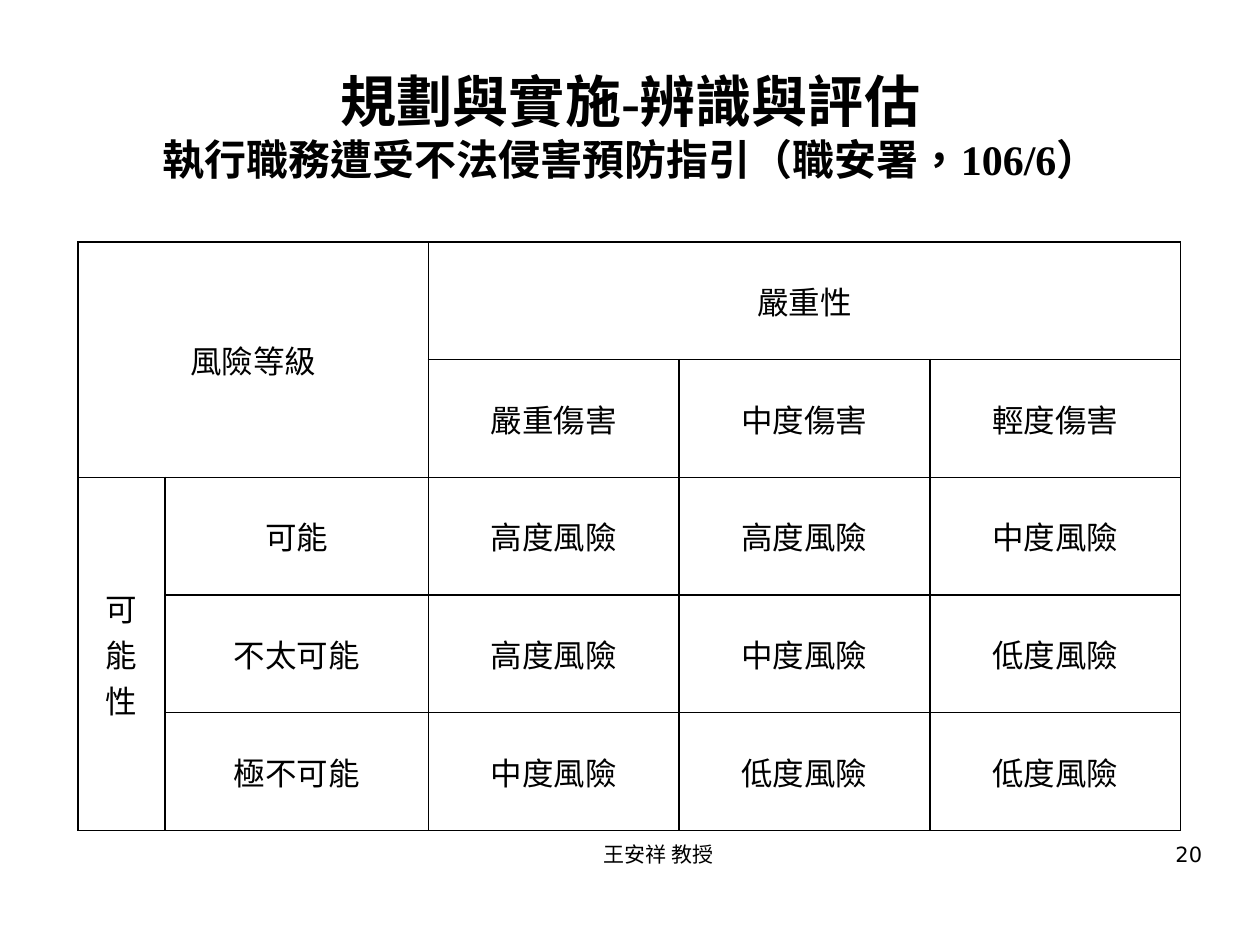
from lxml import etree
from pptx import Presentation
from pptx.dml.color import RGBColor
from pptx.enum.text import MSO_ANCHOR, PP_ALIGN
from pptx.oxml.ns import qn
from pptx.util import Inches, Pt

BLACK = RGBColor(0x00, 0x00, 0x00)
CENTER, RIGHT = PP_ALIGN.CENTER, PP_ALIGN.RIGHT
MIDDLE = MSO_ANCHOR.MIDDLE
CJK_FONT = "Noto Sans CJK SC"
HANGING = Inches(0.51)

RISK_ROWS = [
    ["風險等級", "", "嚴重性", "", ""],
    ["", "", "嚴重傷害", "中度傷害", "輕度傷害"],
    ["可能性", "可能", "高度風險", "高度風險", "中度風險"],
    ["", "不太可能", "高度風險", "中度風險", "低度風險"],
    ["", "極不可能", "中度風險", "低度風險", "低度風險"],
]
MERGES = [((0, 0), (1, 1)), ((0, 2), (0, 4)), ((2, 0), (4, 0))]


def format_run(run, size, font_name, bold=False):
    """Set the size, weight, colour and Latin and East Asian fonts of a run."""
    run.font.size = Pt(size)
    run.font.bold = bold
    run.font.name = font_name
    run.font.color.rgb = BLACK
    properties = run._r.get_or_add_rPr()
    properties.set("lang", "zh-TW")
    east_asian = etree.Element(qn("a:ea"), typeface=CJK_FONT)
    properties.find(qn("a:latin")).addnext(east_asian)


def add_text(slide, box, text, sizes, font_name, alignment, bold=False):
    """Add a middle-anchored text box with one size for each run."""
    shape = slide.shapes.add_textbox(*map(Inches, box))
    frame = shape.text_frame
    frame.word_wrap = True
    frame.vertical_anchor = MIDDLE
    frame.text = text
    paragraph = frame.paragraphs[0]
    paragraph.alignment = alignment
    for run, size in zip(paragraph.runs, sizes):
        format_run(run, size, font_name, bold)


def add_borders(cell):
    """Draw a thin black line on each side of a cell."""
    properties = cell._tc.get_or_add_tcPr()
    for index, side in enumerate(("lnL", "lnR", "lnT", "lnB")):
        line = etree.Element(qn(f"a:{side}"), w=str(Pt(1)))
        fill = etree.SubElement(line, qn("a:solidFill"))
        etree.SubElement(fill, qn("a:srgbClr"), val=str(BLACK))
        properties.insert(index, line)


def fill_cell(cell, text, hanging):
    """Write centred text into a bordered cell without fill."""
    cell.fill.background()
    add_borders(cell)
    cell.vertical_anchor = MIDDLE
    if not text:
        return
    cell.text_frame.text = text
    paragraph = cell.text_frame.paragraphs[0]
    paragraph.alignment = CENTER
    if hanging:
        properties = paragraph._p.get_or_add_pPr()
        properties.set("marL", str(HANGING))
        properties.set("indent", str(-HANGING))
    format_run(paragraph.runs[0], 18, CJK_FONT)


def add_risk_table(slide, box):
    """Add the risk matrix of likelihood against severity."""
    left, top, width, height = map(Inches, box)
    row_count, column_count = len(RISK_ROWS), len(RISK_ROWS[0])
    table = slide.shapes.add_table(
        row_count, column_count, left, top, width, height
    ).table
    table.first_row = False
    table.horz_banding = False
    label_widths = [Inches(0.69), Inches(2.09)]
    level_width = (width - sum(label_widths)) // 3
    for column, column_width in zip(table.columns, label_widths + [level_width] * 3):
        column.width = column_width
    for row in table.rows:
        row.height = height // row_count
    for first, last in MERGES:
        table.cell(*first).merge(table.cell(*last))
    for row_index, texts in enumerate(RISK_ROWS):
        for column_index, text in enumerate(texts):
            fill_cell(table.cell(row_index, column_index), text, text != "可能性")


def add_footer(slide, top, height):
    """Add the lecturer's name and the slide number."""
    add_text(slide, (3.64, top, 3.17, height), "王安祥 教授", [12], CJK_FONT, CENTER)
    add_text(slide, (7.31, top, 2.33, height), "20", [12], "DejaVu Sans", RIGHT)


def main():
    """Build the risk assessment slide and save it."""
    presentation = Presentation()
    presentation.slide_width = Inches(10)
    presentation.slide_height = Inches(7.5)
    slide = presentation.slides.add_slide(presentation.slide_layouts[6])
    add_footer(slide, 6.58, 0.4)
    title = "規劃與實施-辨識與評估\v執行職務遭受不法侵害預防指引（職安署，106/6）"
    add_text(slide, (0.63, 0.33, 8.75, 1.33), title, [32, 24],
             "Times New Roman", CENTER, bold=True)
    add_risk_table(slide, (0.62, 1.92, 8.75, 4.67))
    presentation.save("out.pptx")


if __name__ == "__main__":
    main()
